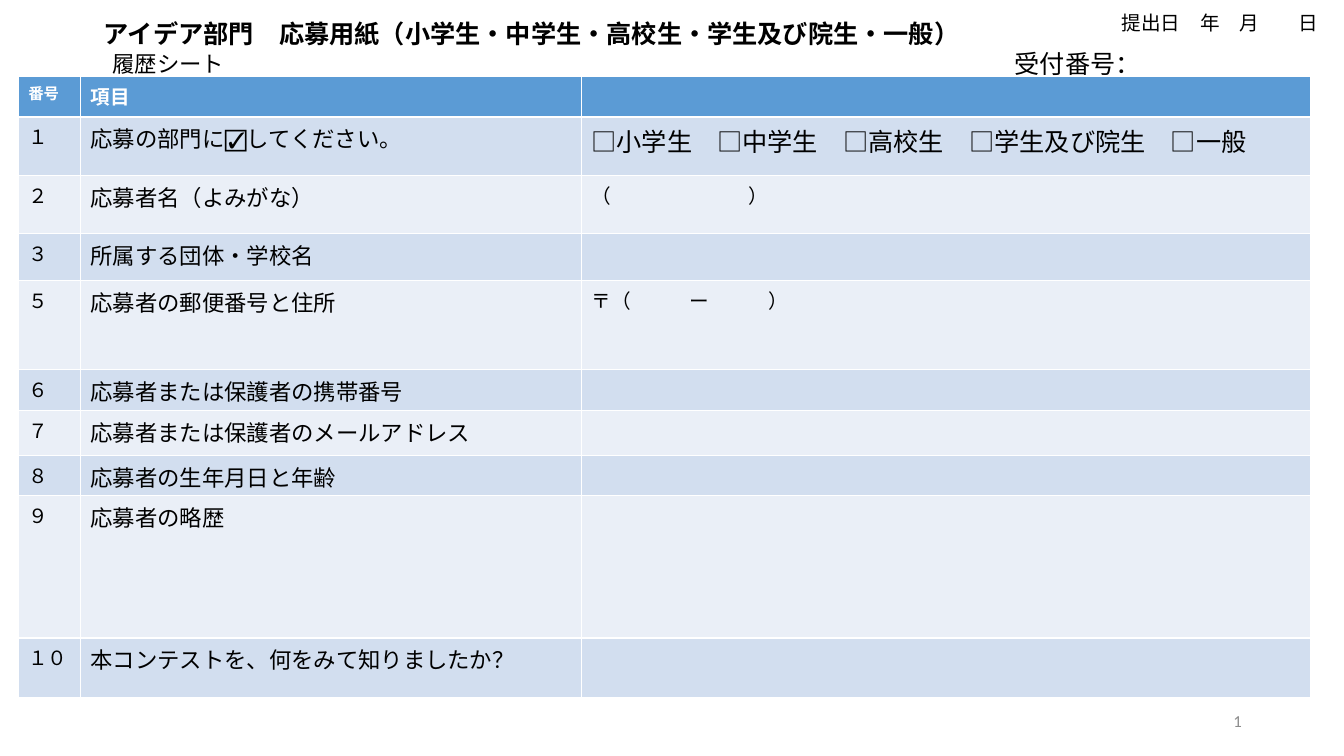
from dataclasses import dataclass

from lxml.etree import SubElement
from pptx import Presentation
from pptx.dml.color import RGBColor
from pptx.enum.text import MSO_ANCHOR, MSO_AUTO_SIZE, PP_ALIGN
from pptx.oxml.ns import qn
from pptx.shapes.base import BaseShape
from pptx.slide import Slide
from pptx.text.text import TextFrame, _Paragraph
from pptx.util import Cm, Pt

FONT = "Calibri"
BLACK = "000000"
WHITE = "FFFFFF"
GREY = "8C8C8C"
HEADER_FILL = "5B9BD5"
BAND_FILLS = ("D2DEEF", "EAEFF7")
COLUMN_WIDTHS = (1.57, 12.62, 18.39)


@dataclass(frozen=True)
class Label:
    text: str
    left: float
    top: float
    width: float
    height: float
    size: int
    wrap: bool = False


@dataclass(frozen=True)
class FormRow:
    height: float
    number: str
    item: str
    answer: str = ""
    answer_size: int = 14


TITLE = Label("　アイデア部門　応募用紙（小学生・中学生・高校生・学生及び院生・一般）　",
              1.73, 0.33, 23.6, 1.02, 18)
LABELS = (
    Label("提出日　年　月　　日", 28.02, 0.15, 8.2, 0.86, 14, True),
    Label("受付番号：", 25.32, 1.09, 3.4, 1.02, 18, True),
    Label("履歴シート", 2.59, 1.14, 3.35, 0.94, 16),
)
HEADER = FormRow(0.99, "番号", "項目")
ROWS = (
    FormRow(1.47, "１", "応募の部門に☑してください。",
            "□小学生　□中学生　□高校生　□学生及び院生　□一般　", 18),
    FormRow(1.47, "２", "応募者名（よみがな）", "（　　　　　　　）"),
    FormRow(1.19, "３", "所属する団体・学校名"),
    FormRow(2.24, "５", "応募者の郵便番号と住所　", "〒（　　　ー　　　）"),
    FormRow(1.02, "６", "応募者または保護者の携帯番号"),
    FormRow(1.14, "７", "応募者または保護者のメールアドレス"),
    FormRow(1.02, "８", "応募者の生年月日と年齢"),
    FormRow(3.58, "９", "応募者の略歴"),
    FormRow(1.5, "１０", "本コンテストを、何をみて知りましたか？"),
)


def color(value: str) -> RGBColor:
    return RGBColor.from_string(value)


def format_runs(para: _Paragraph, size: int, ink: str, bold: bool) -> None:
    for span in para.runs:
        span.font.name = FONT
        span.font.size = Pt(size)
        span.font.bold = bold
        span.font.color.rgb = color(ink)


def write(frame: TextFrame, text: str, size: int, ink: str = BLACK,
          bold: bool = False) -> None:
    frame.text = text
    format_runs(frame.paragraphs[0], size, ink, bold)


def fill_label(box: BaseShape, label: Label, bold: bool = False) -> None:
    box.left, box.top = Cm(label.left), Cm(label.top)
    box.width, box.height = Cm(label.width), Cm(label.height)
    frame = box.text_frame
    write(frame, label.text, label.size, bold=bold)
    frame.word_wrap = label.wrap
    frame.auto_size = MSO_AUTO_SIZE.SHAPE_TO_FIT_TEXT
    frame.vertical_anchor = MSO_ANCHOR.TOP
    frame.paragraphs[0].alignment = PP_ALIGN.LEFT


def add_form(page: Slide) -> None:
    entries = (HEADER, *ROWS)
    form = page.shapes.add_table(
        len(entries), len(COLUMN_WIDTHS), Cm(0.46), Cm(1.93),
        Cm(sum(COLUMN_WIDTHS)), Cm(sum(entry.height for entry in entries))).table
    for column, width in zip(form.columns, COLUMN_WIDTHS):
        column.width = Cm(width)
    for index, entry in enumerate(entries):
        is_header = index == 0
        form.rows[index].height = Cm(entry.height)
        fill = HEADER_FILL if is_header else BAND_FILLS[(index - 1) % 2]
        sizes = (11, 14, 14) if is_header else (14, 16, entry.answer_size)
        texts = (entry.number, entry.item, entry.answer)
        for cell, text, size in zip(form.rows[index].cells, texts, sizes):
            cell.fill.solid()
            cell.fill.fore_color.rgb = color(fill)
            if text:
                write(cell.text_frame, text, size,
                      WHITE if is_header else BLACK, is_header)


def add_page_number(page: Slide) -> None:
    box = page.shapes.add_textbox(Cm(23.93), Cm(17.65), Cm(7.62), Cm(1.02))
    frame = box.text_frame
    frame.word_wrap = True
    frame.vertical_anchor = MSO_ANCHOR.MIDDLE
    write(frame, "1", 12, GREY)
    para = frame.paragraphs[0]
    para.alignment = PP_ALIGN.RIGHT
    span = para.runs[0]._r
    field = SubElement(para._p, qn("a:fld"), type="slidenum",
                       id="{B6F15528-21DE-4FAA-801E-634DDDAF4B2B}")
    field.extend(list(span))
    para._p.remove(span)


def main() -> None:
    deck = Presentation()
    deck.slide_width, deck.slide_height = Cm(33.87), Cm(19.05)
    page = deck.slides.add_slide(deck.slide_layouts[5])
    fill_label(page.shapes.title, TITLE, bold=True)
    for label in LABELS:
        box = page.shapes.add_textbox(0, 0, Cm(label.width), Cm(label.height))
        fill_label(box, label)
    add_form(page)
    add_page_number(page)
    deck.save("out.pptx")


if __name__ == "__main__":
    main()
